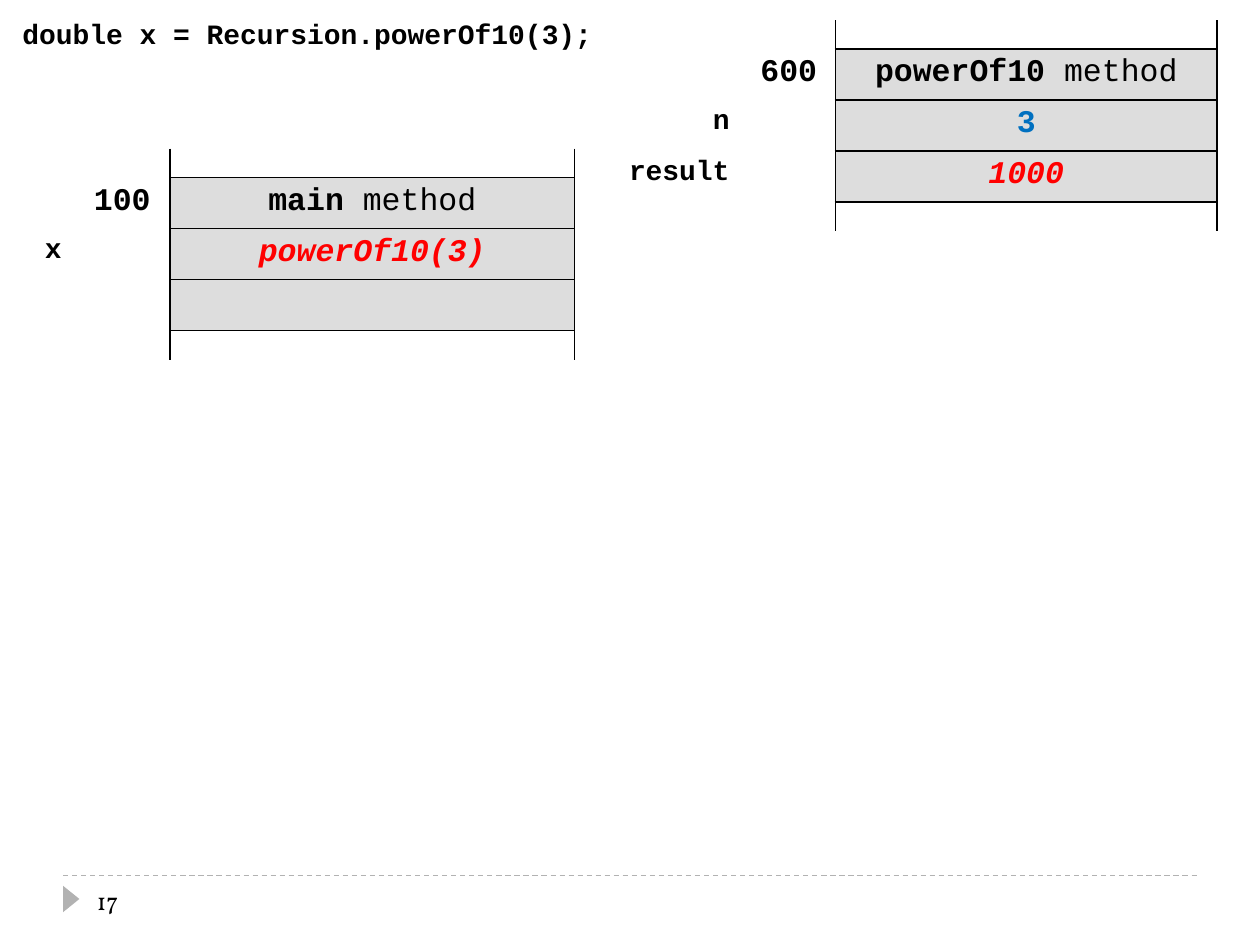
from lxml.etree import SubElement
from pptx import Presentation
from pptx.dml.color import RGBColor
from pptx.enum.dml import MSO_LINE
from pptx.enum.shapes import MSO_CONNECTOR, MSO_SHAPE
from pptx.enum.text import MSO_ANCHOR, MSO_AUTO_SIZE, PP_ALIGN
from pptx.oxml.ns import qn
from pptx.util import Inches, Pt

W, H = 10, 7.5
MONO = "Courier New"
BLACK, RED, BLUE, GREY, CELL = "000000", "FF0000", "0070C0", "B2B2B2", "DDDDDD"
EDGE_ROW, ROW = 0.23, 0.405  # open rows at top and bottom, memory rows between

CODE = "double x = Recursion.powerOf10(3);"
# Each row: variable name, address, runs of (text, colour, bold, italic)
FRAMES = [
    dict(left=4.72, top=0.16, cols=(1.17, 0.74, 3.03), rows=[
        ("", "600", [("powerOf10 ", BLACK, True, False), ("method", BLACK, False, False)]),
        ("n", "", [("3", BLUE, True, False)]),
        ("result", "", [("1000", RED, True, True)]),
    ]),
    dict(left=0.06, top=1.18, cols=(0.53, 0.76, 3.21), rows=[
        ("", "100", [("main ", BLACK, True, False), ("method", BLACK, False, False)]),
        ("x", "", [("powerOf10(3)", RED, True, True)]),
        ("", "", []),
    ]),
]


def rgb(color):
    return RGBColor.from_string(color)


def add_run(p, text, size, color=BLACK, bold=True, italic=False, font=MONO):
    r = p.add_run()
    r.text = text
    f = r.font
    f.name, f.size, f.bold, f.italic = font, Pt(size), bold, italic
    f.color.rgb = rgb(color)


def set_borders(cell, sides):
    """Draw the named sides in black and leave the others open."""
    tcPr = cell._tc.get_or_add_tcPr()
    for i, side in enumerate("LRTB"):
        ln = SubElement(tcPr, qn(f"a:ln{side}"), w=str(Pt(1)))
        if side in sides:
            fill = SubElement(ln, qn("a:solidFill"))
            SubElement(fill, qn("a:srgbClr"), val=BLACK)
        else:
            SubElement(ln, qn("a:noFill"))
        tcPr.insert(i, ln)


def fill_cell(cell, runs, size, align):
    p = cell.text_frame.paragraphs[0]
    p.alignment = align
    for text, *style in runs:
        add_run(p, text, size, *style)
    if not runs:  # small type keeps the narrow rows narrow
        SubElement(p._p, qn("a:endParaRPr"), sz="600")


def add_frame(s, left, top, cols, rows):
    rows = [("", "", []), *rows, ("", "", [])]
    last = len(rows) - 1
    heights = [EDGE_ROW if i in (0, last) else ROW for i in range(len(rows))]
    table = s.shapes.add_table(len(rows), len(cols), Inches(left), Inches(top),
                               Inches(sum(cols)), Inches(sum(heights))).table
    table.first_row = table.horz_banding = False
    for col, width in zip(table.columns, cols):
        col.width = Inches(width)
    for i, (name, address, value) in enumerate(rows):
        table.rows[i].height = Inches(heights[i])
        contents = [
            ([(name,)] if name else [], 16, PP_ALIGN.RIGHT, ""),
            ([(address,)] if address else [], 18, PP_ALIGN.CENTER, "R"),
            (value, 18, PP_ALIGN.CENTER,
             "LR" + ("T" if i > 0 else "") + ("B" if i < last else "")),
        ]
        for j, (runs, size, align, sides) in enumerate(contents):
            cell = table.cell(i, j)
            fill_cell(cell, runs, size, align)
            if j == 2 and 0 < i < last:
                cell.fill.solid()
                cell.fill.fore_color.rgb = rgb(CELL)
            else:
                cell.fill.background()
            set_borders(cell, sides)


def add_footer(s):
    y = 6.95
    rule = s.shapes.add_connector(MSO_CONNECTOR.STRAIGHT, Inches(0.05 * W), Inches(y),
                                  Inches(0.95 * W), Inches(y))
    rule.line.color.rgb = rgb(GREY)
    rule.line.width = Pt(0.75)
    rule.line.dash_style = MSO_LINE.DASH
    SubElement(rule._element.spPr, qn("a:effectLst"))

    marker = s.shapes.add_shape(MSO_SHAPE.ISOSCELES_TRIANGLE, Inches(0.46), Inches(7.07),
                                Inches(0.21), Inches(0.13))
    marker.rotation = 90
    marker.shadow.inherit = False
    marker.fill.solid()
    marker.fill.fore_color.rgb = rgb(GREY)
    marker.line.fill.background()

    tf = s.shapes.add_textbox(Inches(0.67), Inches(y), Inches(2.17), Inches(0.4)).text_frame
    tf.word_wrap = True
    tf.vertical_anchor = MSO_ANCHOR.MIDDLE
    add_run(tf.paragraphs[0], "17", 14, bold=False, font="Vollkorn")


def main():
    prs = Presentation()
    prs.slide_width, prs.slide_height = Inches(W), Inches(H)
    s = prs.slides.add_slide(prs.slide_layouts[6])
    add_footer(s)
    for frame in FRAMES:
        add_frame(s, **frame)
    tf = s.shapes.add_textbox(Inches(0.08), Inches(0.08), Inches(4.79), Inches(0.37)).text_frame
    tf.word_wrap = False
    tf.auto_size = MSO_AUTO_SIZE.SHAPE_TO_FIT_TEXT
    add_run(tf.paragraphs[0], CODE, 16)
    prs.save("out.pptx")


if __name__ == "__main__":
    main()
